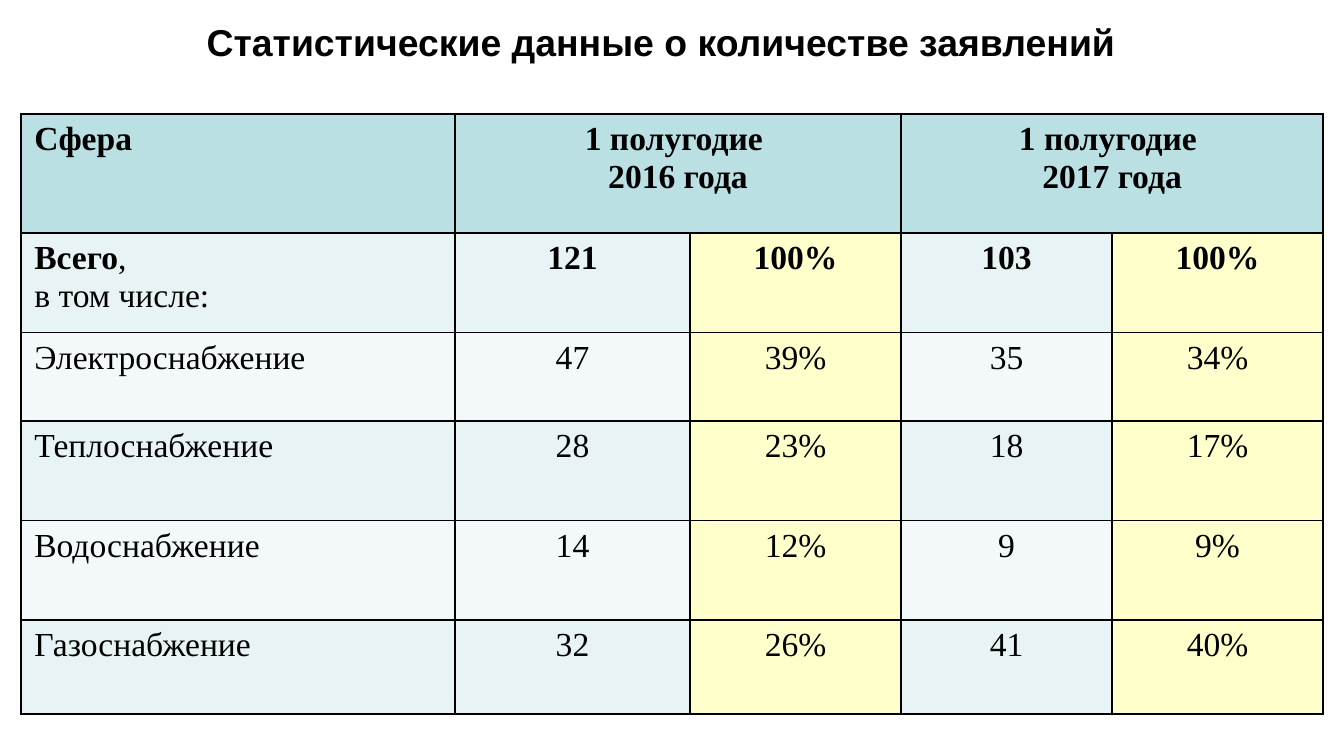
from lxml.etree import SubElement
from pptx import Presentation
from pptx.dml.color import RGBColor
from pptx.enum.text import MSO_ANCHOR as Anchor, PP_ALIGN as Align
from pptx.oxml import parse_xml
from pptx.oxml.ns import nsdecls, qn
from pptx.util import Pt

PX = 4572
BLACK = RGBColor(0x00, 0x00, 0x00)
HEADER = RGBColor(0xBB, 0xE0, 0xE3)
BAND_DARK = RGBColor(0xE7, 0xF3, 0xF4)
BAND_LIGHT = RGBColor(0xF3, 0xF9, 0xFA)
SHARE = RGBColor(0xFF, 0xFF, 0xCC)

COLUMN_WIDTHS = [646, 350, 314, 314, 314]
ROW_HEIGHTS = [177, 148, 132, 148, 148, 140]
ROWS = [
    ["Сфера", "1 полугодие \n2016 года", "", "1 полугодие \n2017 года", ""],
    ["Всего\nв том числе:", "121", "100%", "103", "100%"],
    ["Электроснабжение", "47", "39%", "35", "34%"],
    ["Теплоснабжение", "28", "23%", "18", "17%"],
    ["Водоснабжение", "14", "12%", "9", "9%"],
    ["Газоснабжение", "32", "26%", "41", "40%"],
]


def place(shape, box):
    """Move a shape to a box of left, top, width and height in px."""
    shape.left, shape.top, shape.width, shape.height = (v * PX for v in box)


def style(font, name, size, bold):
    """Give a font its face, size, weight and black colour."""
    font.name, font.size, font.bold = name, Pt(size), bold
    font.color.rgb = BLACK


def add_title(page, box, text):
    """Fill the title placeholder and centre it in the box."""
    title = page.shapes.title
    place(title, box)
    frame = title.text_frame
    frame.text = text
    frame.vertical_anchor = Anchor.MIDDLE
    para = frame.paragraphs[0]
    para.alignment = Align.CENTER
    style(para.runs[0].font, "Arial", 20, True)


def add_borders(cell):
    """Draw a thin black line on every side of a cell."""
    props = cell._tc.get_or_add_tcPr()
    for index, side in enumerate(("lnL", "lnR", "lnT", "lnB")):
        line = parse_xml(f'<a:{side} {nsdecls("a")} w="{Pt(1)}"/>')
        fill = SubElement(line, qn("a:solidFill"))
        SubElement(fill, qn("a:srgbClr"), val=str(BLACK))
        props.insert(index, line)


def cell_color(row, column):
    """Return the fill for a place in the table."""
    if row == 0:
        return HEADER
    if column in (2, 4):
        return SHARE
    return BAND_DARK if row % 2 else BAND_LIGHT


def fill_cell(cell, row, column, text):
    """Write and format one cell."""
    cell.fill.solid()
    cell.fill.fore_color.rgb = cell_color(row, column)
    add_borders(cell)
    cell.text_frame.text = text
    for index, para in enumerate(cell.text_frame.paragraphs):
        para.alignment = Align.CENTER if column else Align.LEFT
        bold = row == 0 or (row == 1 and index == 0)
        for span in para.runs:
            style(span.font, "Times New Roman", 18, bold)


def add_statistics(page, box):
    """Build the table of applications by sphere and half-year."""
    left, top, width, height = (v * PX for v in box)
    frame = page.shapes.add_table(len(ROWS), len(COLUMN_WIDTHS), left, top, width, height)
    table = frame.table
    for column, size in zip(table.columns, COLUMN_WIDTHS):
        column.width = size * PX
    for row, size in zip(table.rows, ROW_HEIGHTS):
        row.height = size * PX
    for row, texts in enumerate(ROWS):
        for column, text in enumerate(texts):
            fill_cell(table.cell(row, column), row, column, text)
    for column in (1, 3):
        table.cell(0, column).merge(table.cell(0, column + 1))
    comma = table.cell(1, 0).text_frame.paragraphs[0].add_run()
    comma.text = ","
    style(comma.font, "Times New Roman", 18, False)


def main():
    """Build and save the deck."""
    deck = Presentation()
    deck.slide_width, deck.slide_height = 2000 * PX, 1125 * PX
    page = deck.slides.add_slide(deck.slide_layouts[5])
    add_title(page, (0, 0, 1968, 124), "Статистические данные о количестве заявлений")
    add_statistics(page, (31, 170, sum(COLUMN_WIDTHS), sum(ROW_HEIGHTS)))
    deck.save("out.pptx")


if __name__ == "__main__":
    main()
